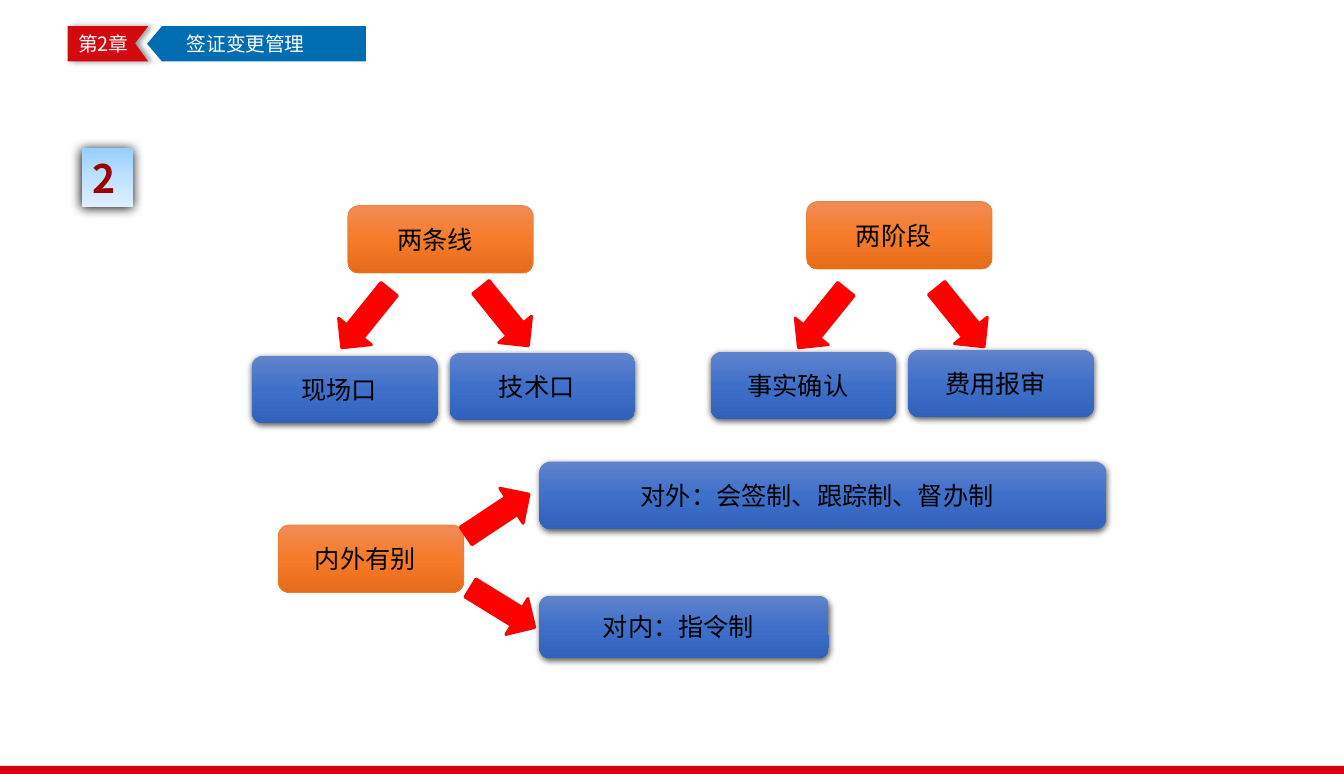
from copy import deepcopy
from dataclasses import dataclass

from lxml.etree import SubElement
from pptx import Presentation
from pptx.dml.color import RGBColor
from pptx.enum.shapes import MSO_SHAPE
from pptx.enum.text import MSO_ANCHOR, PP_ALIGN
from pptx.oxml.ns import qn
from pptx.shapes.autoshape import Shape
from pptx.util import Inches, Pt

FONT = "Noto Sans CJK SC"
BLACK = RGBColor(0x00, 0x00, 0x00)
WHITE = RGBColor(0xFF, 0xFF, 0xFF)
RED = RGBColor(0xFF, 0x00, 0x00)
MAROON = RGBColor(0x99, 0x00, 0x00)
BAR_RED = RGBColor(0xD7, 0x00, 0x0F)
TAG_RED = RGBColor(0xD2, 0x0A, 0x10)
TAG_BLUE = RGBColor(0x00, 0x6C, 0xB1)
EDGE = RGBColor(0xED, 0x7D, 0x31)
SKY = (RGBColor(0x96, 0xD0, 0xFF), RGBColor(0xBF, 0xE1, 0xFF), RGBColor(0xE0, 0xEF, 0xFF))
ORANGE = (RGBColor(0xF1, 0x8C, 0x57), RGBColor(0xF6, 0x7B, 0x28), RGBColor(0xE5, 0x6C, 0x19))
BLUE = (RGBColor(0x61, 0x83, 0xCB), RGBColor(0x3E, 0x70, 0xCA), RGBColor(0x30, 0x62, 0xBB))


@dataclass
class Node:
    text: str
    left: float
    top: float
    head: bool = False
    width: float = 1.84
    height: float = 0.67


@dataclass
class Arrow:
    left: float
    top: float
    turn: float


@dataclass
class Shade:
    alpha: int
    blur: float
    dist: float
    angle: int = 90


NODES = [
    Node("两条线", 3.45, 2.04, True),
    Node("现场口", 2.5, 3.53),
    Node("技术口", 4.46, 3.5),
    Node("两阶段", 8, 2, True),
    Node("事实确认", 7.05, 3.49),
    Node("费用报审", 9.01, 3.47),
    Node("内外有别", 2.76, 5.21, True),
    Node("对外：会签制、跟踪制、督办制", 5.35, 4.58, width=5.62),
    Node("对内：指令制", 5.35, 5.91, width=2.87, height=0.62),
]
ARROWS = [
    Arrow(3.25, 2.95, 308.9),
    Arrow(4.63, 2.93, 231.1),
    Arrow(7.78, 2.95, 308.9),
    Arrow(9.15, 2.94, 231.1),
    Arrow(4.56, 4.9, 146.4),
    Arrow(4.61, 5.82, 211.6),
]

deck = Presentation()
deck.slide_width, deck.slide_height = Inches(13.33), Inches(7.68)
slide = deck.slides.add_slide(deck.slide_layouts[6])


def plain(shape: Shape, color: RGBColor | None = None) -> Shape:
    """Remove line and shadow, and fill with one colour if given."""
    shape.shadow.inherit = False
    shape.line.fill.background()
    if color is not None:
        shape.fill.solid()
        shape.fill.fore_color.rgb = color
    return shape


def add(kind: MSO_SHAPE, left: float, top: float, width: float, height: float,
        color: RGBColor | None = None) -> Shape:
    box = (Inches(n) for n in (left, top, width, height))
    return plain(slide.shapes.add_shape(kind, *box), color)


def blend(shape: Shape, colors: tuple[RGBColor, ...]) -> None:
    """Fill from top to bottom with three even stops."""
    shape.fill.gradient()
    shape.fill.gradient_angle = 270
    stops = shape._element.spPr.find(qn("a:gradFill")).find(qn("a:gsLst"))
    stops.insert(1, deepcopy(stops[0]))
    for i, stop in enumerate(shape.fill.gradient_stops):
        stop.color.rgb = colors[i]
        stop.position = i / 2


def cast(shape: Shape, shade: Shade) -> None:
    """Add an outer black shadow."""
    effects = shape._element.spPr.find(qn("a:effectLst"))
    outer = SubElement(effects, qn("a:outerShdw"), blurRad=str(Pt(shade.blur)),
                       dist=str(Pt(shade.dist)), dir=str(shade.angle * 60000),
                       algn="ctr", rotWithShape="0")
    color = SubElement(outer, qn("a:srgbClr"), val=str(BLACK))
    SubElement(color, qn("a:alpha"), val=str(shade.alpha * 1000))


def write(shape: Shape, text: str, size: float, color: RGBColor, left: float, right: float,
          align: PP_ALIGN = PP_ALIGN.CENTER, bold: bool = False) -> None:
    frame = shape.text_frame
    frame.text = text
    frame.word_wrap = True
    frame.vertical_anchor = MSO_ANCHOR.MIDDLE
    frame.margin_left, frame.margin_right = Inches(left), Inches(right)
    frame.margin_top = frame.margin_bottom = 0
    frame.paragraphs[0].alignment = align
    run = frame.paragraphs[0].runs[0]
    run.font.name, run.font.size, run.font.bold = FONT, Pt(size), bold
    run.font.color.rgb = color
    SubElement(run._r.get_or_add_rPr(), qn("a:ea"), typeface=FONT)


def draw_node(node: Node) -> None:
    shape = add(MSO_SHAPE.FLOWCHART_ALTERNATE_PROCESS,
                node.left, node.top, node.width, node.height)
    blend(shape, ORANGE if node.head else BLUE)
    if node.head:
        shape.line.color.rgb = EDGE
        shape.line.width = Pt(0.5)
    else:
        cast(shape, Shade(63, 4.5, 1.5))
    write(shape, node.text, 18, BLACK, 0.1, 0.21)


def draw_arrow(arrow: Arrow) -> None:
    shape = add(MSO_SHAPE.LEFT_ARROW, arrow.left, arrow.top, 0.75, 0.42, RED)
    shape.rotation = arrow.turn
    shape.line.color.rgb = RED
    shape.line.width = Pt(2)


# Bottom bar
add(MSO_SHAPE.RECTANGLE, 0, 7.6, 13.33, 0.08, BAR_RED)

# Section number
badge = add(MSO_SHAPE.RECTANGLE, 0.81, 1.47, 0.51, 0.58)
blend(badge, SKY)
cast(badge, Shade(100, 8.5, 1))
write(badge, "2", 28, MAROON, 0.05, 0.12, bold=True)

# Diagram
for node in NODES:
    draw_node(node)
for arrow in ARROWS:
    draw_arrow(arrow)

# Chapter tag
edge = [(1.47, 0.26), (1.34, 0.43), (1.47, 0.61), (0.67, 0.61)]
pen = slide.shapes.build_freeform(Inches(0.67), Inches(0.26))
pen.add_line_segments([(Inches(x), Inches(y)) for x, y in edge])
tag = plain(pen.convert_to_shape(), TAG_RED)
cast(tag, Shade(40, 4, 3, 0))
write(tag, "第2章", 14.1, WHITE, 0, 0.09)

# Chapter title
title = add(MSO_SHAPE.PENTAGON, 1.46, 0.26, 2.17, 0.35, TAG_BLUE)
title.adjustments[0] = 0.42
title._element.spPr.xfrm.set("flipH", "1")
write(title, "签证变更管理", 14.1, WHITE, 0.32, 0.06, PP_ALIGN.LEFT)

deck.save("out.pptx")
